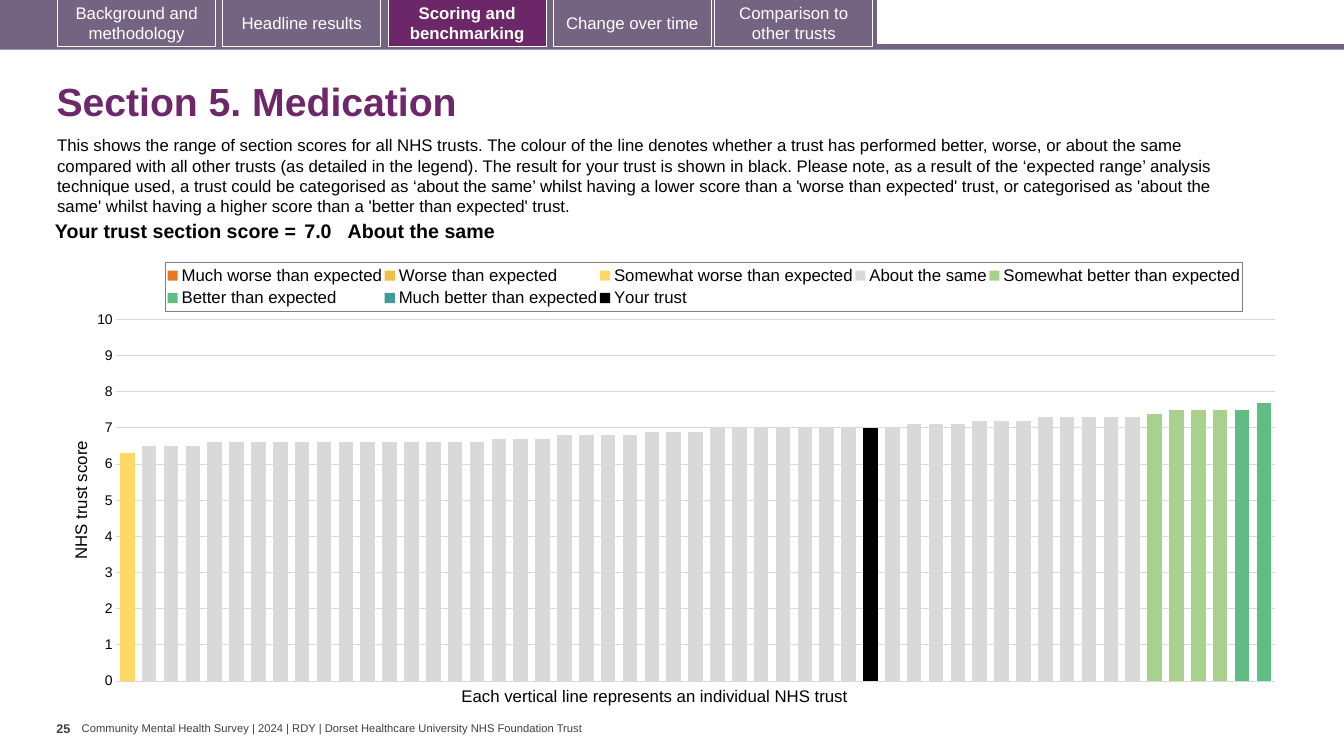
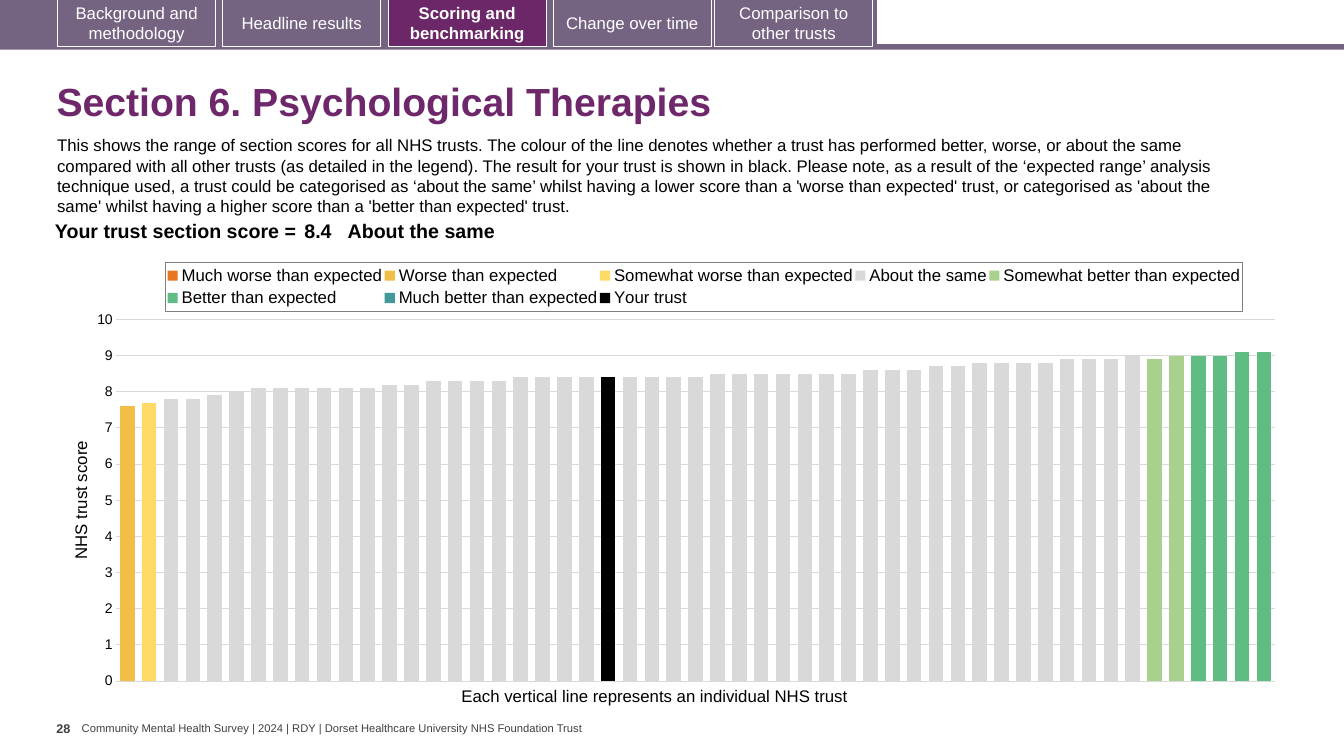
from copy import deepcopy
from dataclasses import dataclass
from typing import NamedTuple

from pptx import Presentation
from pptx.chart.data import CategoryChartData
from pptx.dml.color import RGBColor
from pptx.enum.chart import XL_CHART_TYPE, XL_LEGEND_POSITION, XL_TICK_MARK
from pptx.enum.shapes import MSO_SHAPE
from pptx.enum.text import MSO_ANCHOR, MSO_AUTO_SIZE, PP_ALIGN
from pptx.oxml import parse_xml
from pptx.oxml.ns import nsdecls, qn
from pptx.util import Cm, Pt

COLUMNS = XL_CHART_TYPE.COLUMN_CLUSTERED
LEGEND_TOP = XL_LEGEND_POSITION.TOP
TICK_NONE = XL_TICK_MARK.NONE
RECT = MSO_SHAPE.RECTANGLE
MIDDLE = MSO_ANCHOR.MIDDLE
FIT_SHAPE = MSO_AUTO_SIZE.SHAPE_TO_FIT_TEXT
NO_FIT = MSO_AUTO_SIZE.NONE
LEFT, CENTER, RIGHT = PP_ALIGN.LEFT, PP_ALIGN.CENTER, PP_ALIGN.RIGHT


@dataclass(frozen=True)
class Theme:
    """Colours, font and type sizes of the report."""
    font: str = "Arial"
    band: str = "756382"
    active: str = "6B2768"
    title: str = "6D276A"
    white: str = "FFFFFF"
    black: str = "000000"
    footer: str = "404040"
    grid: str = "D9D9D9"
    border: str = "7F7F7F"
    title_size: int = 28
    score_size: int = 14
    body_size: int = 12
    tick_size: int = 10
    number_size: int = 9
    footer_size: int = 8
    line_width: float = 0.75


class Box(NamedTuple):
    """A rectangle in centimetres."""
    left: float
    top: float
    width: float
    height: float

    def cm(self):
        """Return the four lengths for python-pptx."""
        return tuple(Cm(v) for v in self)


class Section(NamedTuple):
    """One section: title, page, score, rating and the runs of bars (start, values)."""
    title: str
    page: str
    score: float
    rating: str
    runs: dict


THEME = Theme()
SLIDE = Box(0, 0, 33.87, 19.05)
TABS = (("Background and methodology", 1.45), ("Headline results", 5.61),
        ("Scoring and benchmarking", 9.78), ("Change over time", 13.94),
        ("Comparison to other trusts", 18.01))
ACTIVE_TAB = "Scoring and benchmarking"
FOOTER = ("Community Mental Health Survey | 2024 | RDY | "
          "Dorset Healthcare University NHS Foundation Trust")
INTRO = (
    "This shows the range of section scores for all NHS trusts. The colour of the line denotes "
    "whether a trust has performed better, worse, or about the same compared with all other "
    "trusts (as detailed in the legend). The result for your trust is shown in black. Please "
    "note, as a result of the ‘expected range’ analysis technique used, a trust could be "
    "categorised as ‘about the same’ whilst having a lower score than a 'worse than expected' "
    "trust, or categorised as 'about the same' whilst having a higher score than a "
    "'better than expected' trust.")
CAPTION = "Each vertical line represents an individual NHS trust"
TRUSTS = 53
RATINGS = {
    "Much worse than expected": "E87722",
    "Worse than expected": "F1BE48",
    "Somewhat worse than expected": "FFD966",
    "About the same": "D9D9D9",
    "Somewhat better than expected": "A9D18E",
    "Better than expected": "5FBD83",
    "Much better than expected": "419999",
    "Your trust": "000000",
}
SECTIONS = (
    Section("Section 5. Medication", "25", 7.0, "About the same", {
        "Somewhat worse than expected": (0, [6.3]),
        "About the same": (1, [6.5] * 3 + [6.6] * 13 + [6.7] * 3 + [6.8] * 4 + [6.9] * 3
                           + [7] * 9 + [7.1] * 3 + [7.2] * 3 + [7.3] * 5),
        "Somewhat better than expected": (47, [7.4] + [7.5] * 3),
        "Better than expected": (51, [7.5, 7.7]),
        "Your trust": (34, [7]),
    }),
    Section("Section 6. Psychological Therapies", "28", 8.4, "About the same", {
        "Worse than expected": (0, [7.6]),
        "Somewhat worse than expected": (1, [7.7]),
        "About the same": (2, [7.8] * 2 + [7.9, 8] + [8.1] * 6 + [8.2] * 2 + [8.3] * 4
                           + [8.4] * 9 + [8.5] * 7 + [8.6] * 3 + [8.7] * 2 + [8.8] * 4
                           + [8.9] * 3 + [9]),
        "Somewhat better than expected": (47, [8.9, 9]),
        "Better than expected": (49, [9, 9, 9.1, 9.1]),
        "Your trust": (22, [8.4]),
    }),
)


def style_font(font, size, color=THEME.black, bold=False):
    """Set typeface, size, colour and weight of a font."""
    font.name, font.size, font.bold = THEME.font, Pt(size), bold
    font.color.rgb = RGBColor.from_string(color)


def write(tf, text, size, color=THEME.black, bold=False, align=LEFT):
    """Put one formatted paragraph into a text frame."""
    tf.text = text
    p = tf.paragraphs[0]
    p.alignment = align
    style_font(p.runs[0].font, size, color, bold)


def add_text(slide, box, text, size, wrap=False, fit=FIT_SHAPE, **style):
    """Add a text box and return its text frame."""
    tf = slide.shapes.add_textbox(*box.cm()).text_frame
    tf.word_wrap, tf.auto_size = wrap, fit
    write(tf, text, size, **style)
    return tf


def add_rect(slide, box, fill, line=None):
    """Add a flat rectangle."""
    sp = slide.shapes.add_shape(RECT, *box.cm())
    sp.shadow.inherit = False
    sp.fill.solid()
    sp.fill.fore_color.rgb = RGBColor.from_string(fill)
    if line:
        sp.line.color.rgb = RGBColor.from_string(line)
        sp.line.width = Pt(THEME.line_width)
    else:
        sp.line.fill.background()
    return sp


def add_tabs(slide, box):
    """Draw the navigation band and its tabs along the top of the box."""
    add_rect(slide, Box(box.left, box.top + 1.11, box.width, 0.14), THEME.band)
    add_rect(slide, Box(box.left, box.top, 22.1, 1.19), THEME.band)
    for label, offset in TABS:
        active = label == ACTIVE_TAB
        sp = add_rect(slide, Box(box.left + offset, box.top - 0.02, 3.99, 1.19),
                      THEME.active if active else THEME.band, THEME.white)
        sp.text_frame.word_wrap = True
        sp.text_frame.vertical_anchor = MIDDLE
        write(sp.text_frame, label, THEME.body_size, THEME.white, active, CENTER)


def add_footer(slide, box):
    """Write the survey line into the box."""
    tf = add_text(slide, box, FOOTER, THEME.footer_size, color=THEME.footer)
    tf.vertical_anchor = MIDDLE
    tf.margin_left = tf.margin_right = tf.margin_top = tf.margin_bottom = 0


def furnish_layout(slide):
    """Build the tabs and footer and hand them to the slide's layout."""
    add_tabs(slide, SLIDE)
    add_footer(slide, Box(2.06, 18.19, 12.78, 0.33))
    tree = slide.slide_layout.shapes.element
    for sp in list(slide.shapes):
        if not sp.is_placeholder:
            tree.append(sp.element)


def add_heading(slide, box, section):
    """Place the title, page number and introduction in the box."""
    title = slide.shapes.title
    title.left, title.top, title.width, title.height = Box(
        box.left + 1.17, box.top + 1.7, 31.72, 1.83).cm()
    title.text_frame.vertical_anchor = MIDDLE
    title.text_frame.auto_size = NO_FIT
    write(title.text_frame, section.title, THEME.title_size, THEME.title, True)
    title.text_frame.paragraphs[0].line_spacing = 0.9
    tf = add_text(slide, Box(box.left + 1.42, box.top + 18.03, 0.64, 1.02), section.page,
                  THEME.number_size, fit=NO_FIT, color=THEME.footer, bold=True)
    tf.margin_left = tf.margin_right = 0
    add_text(slide, Box(box.left + 1.19, box.top + 3.28, 30.81, 2.31), INTRO,
             THEME.body_size, wrap=True)


def manual_layout(left, top, width, height, inner=False):
    """Return a chart layout element given in fractions of the chart."""
    target = '<c:layoutTarget val="inner"/>' if inner else ""
    values = zip("xywh", (left, top, width, height))
    return parse_xml(
        f'<c:layout {nsdecls("c")}><c:manualLayout>{target}<c:xMode val="edge"/>'
        '<c:yMode val="edge"/>' + "".join(f'<c:{k} val="{v}"/>' for k, v in values)
        + "</c:manualLayout></c:layout>")


def drop(parent, *tags):
    """Remove the named children that exist."""
    for tag in tags:
        for child in parent.findall(qn(tag)):
            parent.remove(child)


def add_second_axis(plot_area):
    """Move the last series to a bar chart of its own on a right-hand axis."""
    bars = plot_area.find(qn("c:barChart"))
    cat, val = plot_area.find(qn("c:catAx")), plot_area.find(qn("c:valAx"))
    second = deepcopy(bars)
    for sr in second.findall(qn("c:ser"))[:-1]:
        second.remove(sr)
    bars.remove(bars.findall(qn("c:ser"))[-1])
    bars.addnext(second)
    cat2, val2 = deepcopy(cat), deepcopy(val)
    ids = ("50010", "50020")
    for node, new in zip(second.findall(qn("c:axId")), ids):
        node.set("val", new)
    for axis, (own, other) in ((cat2, ids), (val2, ids[::-1])):
        axis.find(qn("c:axId")).set("val", own)
        axis.find(qn("c:crossAx")).set("val", other)
    drop(val2, "c:majorGridlines", "c:title")
    for tag, value in (("axPos", "r"), ("tickLblPos", "none"), ("majorTickMark", "out"),
                       ("crosses", "max")):
        val2.find(qn(f"c:{tag}")).set("val", value)
    val.addnext(val2)
    val2.addnext(cat2)


def style_value_axis(axis):
    """Format the score axis, its gridlines and its title."""
    axis.minimum_scale, axis.maximum_scale, axis.major_unit = 0, 10, 1
    axis.major_tick_mark = axis.minor_tick_mark = TICK_NONE
    axis.format.line.fill.background()
    grid = axis.major_gridlines.format.line
    grid.color.rgb = RGBColor.from_string(THEME.grid)
    grid.width = Pt(THEME.line_width)
    style_font(axis.tick_labels.font, THEME.tick_size)
    write(axis.axis_title.text_frame, "NHS trust score", THEME.body_size)


def style_legend(chart):
    """Place the framed legend above the plot."""
    chart.has_legend = True
    legend = chart.legend
    legend.position, legend.include_in_layout = LEGEND_TOP, False
    style_font(legend.font, THEME.body_size)
    node = legend._element
    drop(node, "c:layout")
    node.find(qn("c:legendPos")).addnext(manual_layout(0.08, 0.03, 0.88, 0.11))
    node.find(qn("c:txPr")).addprevious(parse_xml(
        f'<c:spPr {nsdecls("c", "a")}><a:noFill/><a:ln w="{Pt(THEME.line_width)}"><a:solidFill>'
        f'<a:srgbClr val="{THEME.border}"/></a:solidFill></a:ln></c:spPr>'))


def add_score_chart(slide, box, runs):
    """Draw the ranked trust scores in the box with the caption at its foot."""
    add_text(slide, Box(box.left + 9.68, box.top + 10.88, 10.44, 0.76), CAPTION,
             THEME.body_size)
    data = CategoryChartData()
    data.categories = [str(n + 1) for n in range(TRUSTS)]
    for name in RATINGS:
        start, values = runs.get(name, (0, []))
        data.add_series(name, [None] * start + values + [None] * (TRUSTS - start - len(values)))
    chart = slide.shapes.add_chart(COLUMNS, *box.cm(), data).chart
    style_font(chart.font, THEME.tick_size)
    chart.has_title = False
    plot = chart.plots[0]
    plot.gap_width, plot.overlap, plot.vary_by_categories = 50, 100, False
    for sr, color in zip(plot.series, RATINGS.values()):
        sr.format.fill.solid()
        sr.format.fill.fore_color.rgb = RGBColor.from_string(color)
        sr.invert_if_negative = False
    chart.category_axis.visible = False
    style_value_axis(chart.value_axis)
    style_legend(chart)
    space = chart.element
    plot_area = space.find(qn("c:chart")).find(qn("c:plotArea"))
    drop(plot_area, "c:layout")
    plot_area.insert(0, manual_layout(0.04, 0.158, 0.946, 0.808, inner=True))
    add_second_axis(plot_area)
    space.find(qn("c:txPr")).addprevious(parse_xml(
        f'<c:spPr {nsdecls("c", "a")}><a:noFill/><a:ln><a:noFill/></a:ln></c:spPr>'))


def add_score_table(slide, box, section):
    """Write the trust's score and rating as a one-row table in the box."""
    table = slide.shapes.add_table(1, 3, *box.cm()).table
    table.first_row = table.horz_banding = False
    table.rows[0].height = Cm(box.height)
    cells = (("Your trust section score =", 6.68, RIGHT, 0.1),
             (f"{section.score:.1f}", 1.19, LEFT, 0.1),
             (section.rating, box.width - 7.87, LEFT, 0))
    for i, (text, width, align, margin) in enumerate(cells):
        table.columns[i].width = Cm(width)
        cell = table.cell(0, i)
        cell.fill.background()
        cell.margin_left = cell.margin_right = Cm(margin)
        cell.margin_top = cell.margin_bottom = Cm(0.1)
        write(cell.text_frame, text, THEME.score_size, bold=True, align=align)


def main():
    """Build the section slides and save them."""
    prs = Presentation()
    prs.slide_width, prs.slide_height = Cm(SLIDE.width), Cm(SLIDE.height)
    layout = prs.slide_layouts[5]
    for i, section in enumerate(SECTIONS):
        slide = prs.slides.add_slide(layout)
        if i == 0:
            furnish_layout(slide)
        add_heading(slide, SLIDE, section)
        add_score_chart(slide, Box(1.7, 6.27, 30.86, 11.28), section.runs)
        add_score_table(slide, Box(0.89, 5.46, 29.69, 0.56), section)
    prs.save("out.pptx")


if __name__ == "__main__":
    main()
